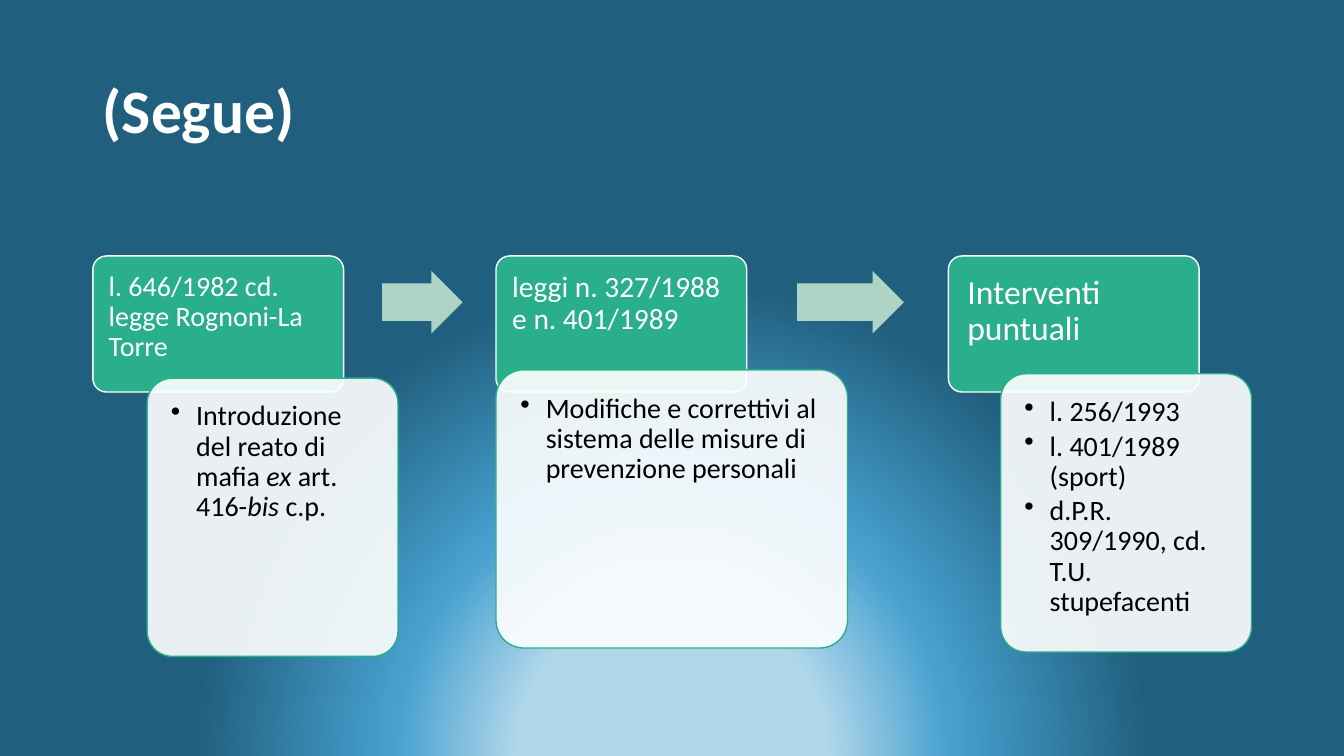
"""Build the slide "(Segue)": three legal steps joined by block arrows."""
from lxml import etree
from pptx import Presentation
from pptx import util as u
from pptx.dml.color import RGBColor
from pptx.enum import shapes, text
from pptx.oxml.ns import qn

WHITE = RGBColor(255, 255, 255)
BLACK = RGBColor(0, 0, 0)
GREEN = RGBColor(0x29, 0xAF, 0x8C)
SAGE = RGBColor(0xAD, 0xD4, 0xC5)
GLOW = [(20, RGBColor(0xB1, 0xD7, 0xEB)), (36, RGBColor(0x47, 0xA1, 0xCF)),
        (62, RGBColor(0x21, 0x5F, 0x7E))]
FOCUS = {"l": "50000", "t": "130000", "r": "50000", "b": "-30000"}

TITLE = "(Segue)"
STEPS = [
    {"head": "l. 646/1982 cd. legge Rognoni-La Torre", "size": 20, "pad": 0.3,
     "left": 2.34, "panel": (3.71, 9.53, 6.32),
     "items": [[("Introduzione del reato di mafia ", False), ("ex", True),
                (" art. 416-", False), ("bis", True), (" c.p.", False)]]},
    {"head": "leggi n. 327/1988 e n. 401/1989", "size": 21, "pad": 0.31,
     "left": 12.5, "panel": (12.5, 9.32, 8.86),
     "items": [[("Modifiche e correttivi al sistema delle misure "
                 "di prevenzione personali", False)]]},
    {"head": "Interventi puntuali", "size": 24, "pad": 0.38,
     "left": 23.9, "panel": (25.22, 9.42, 6.32),
     "items": [[("l. 256/1993", False)], [("l. 401/1989 (sport)", False)],
               [("d.P.R. 309/1990, cd. T.U. stupefacenti", False)]]},
]
ARROWS = [(9.63, 2.03), (20.09, 2.69)]
CARD_TOP, CARD_W, CARD_H = 6.45, 6.32, 3.43
PANEL_H, PANEL_PAD = 7.01, 0.41
ARROW_TOP, ARROW_H = 6.83, 1.57


def apply(obj, form):
    for name, val in form.items():
        setattr(obj, name, val)


def paint(slide):
    slide.background.fill.gradient()
    grad = next(slide.element.iter(qn("a:gradFill")))
    for child in list(grad):
        grad.remove(child)
    stops = etree.SubElement(grad, qn("a:gsLst"))
    for pos, tint in GLOW:
        stop = etree.SubElement(stops, qn("a:gs"), pos=str(pos * 1000))
        etree.SubElement(stop, qn("a:srgbClr"), val=str(tint))
    ring = etree.SubElement(grad, qn("a:path"))
    ring.set("path", "circle")
    etree.SubElement(ring, qn("a:fillToRect"), FOCUS)


def add_box(slide, kind, box, fill, adjust, line=None):
    shape = slide.shapes.add_shape(kind, *map(u.Cm, box))
    shape.shadow.inherit = False
    shape.fill.solid()
    shape.fill.fore_color.rgb = fill
    for spot, val in enumerate(adjust):
        shape.adjustments[spot] = val
    if line is None:
        shape.line.fill.background()
    else:
        shape.line.color.rgb = line
        shape.line.width = u.Pt(1)
    return shape


def write(shape, paras, size, color, pad=None, bold=False, bullet=False,
          anchor=text.MSO_ANCHOR.TOP):
    frame = shape.text_frame
    apply(frame, {"word_wrap": True, "vertical_anchor": anchor})
    if pad is not None:
        for side in ("left", "top", "right", "bottom"):
            setattr(frame, "margin_" + side, u.Cm(pad))
    for spot, runs in enumerate(paras):
        para = frame.add_paragraph() if spot else frame.paragraphs[0]
        apply(para, {"alignment": text.PP_ALIGN.LEFT, "line_spacing": 0.9,
                     "space_after": u.Pt(3 if bullet else 0)})
        if bullet:
            props = para._p.get_or_add_pPr()
            props.set("marL", str(u.Cm(0.64)))
            props.set("indent", str(u.Cm(-0.64)))
            etree.SubElement(props, qn("a:buChar"), char="•")
        for words, slant in runs:
            run = para.add_run()
            run.text = words
            apply(run.font, {"name": "Calibri", "size": u.Pt(size),
                             "bold": bold, "italic": slant})
            run.font.color.rgb = color


def add_step(slide, step):
    round_box = shapes.MSO_SHAPE.ROUNDED_RECTANGLE
    card = add_box(slide, round_box, (step["left"], CARD_TOP, CARD_W, CARD_H),
                   GREEN, [0.1], WHITE)
    write(card, [[(step["head"], False)]], step["size"], WHITE, step["pad"])
    panel = add_box(slide, round_box, (*step["panel"], PANEL_H),
                    WHITE, [0.1], GREEN)
    tint = panel._element.spPr.find(qn("a:solidFill"))[0]
    etree.SubElement(tint, qn("a:alpha"), val="90000")
    write(panel, step["items"], 20, BLACK, PANEL_PAD, bullet=True)


def main():
    deck = Presentation()
    apply(deck, {"slide_width": u.Cm(33.87), "slide_height": u.Cm(19.05)})
    slide = deck.slides.add_slide(deck.slide_layouts[6])
    paint(slide)
    title = slide.shapes.add_textbox(*map(u.Cm, (2.34, 1.02, 29.21, 3.68)))
    write(title, [[(TITLE, False)]], 44, WHITE, bold=True,
          anchor=text.MSO_ANCHOR.MIDDLE)
    for step in STEPS:
        add_step(slide, step)
    for left, width in ARROWS:
        add_box(slide, shapes.MSO_SHAPE.RIGHT_ARROW,
                (left, ARROW_TOP, width, ARROW_H), SAGE, [0.6, 0.5])
    deck.save("out.pptx")


if __name__ == "__main__":
    main()
